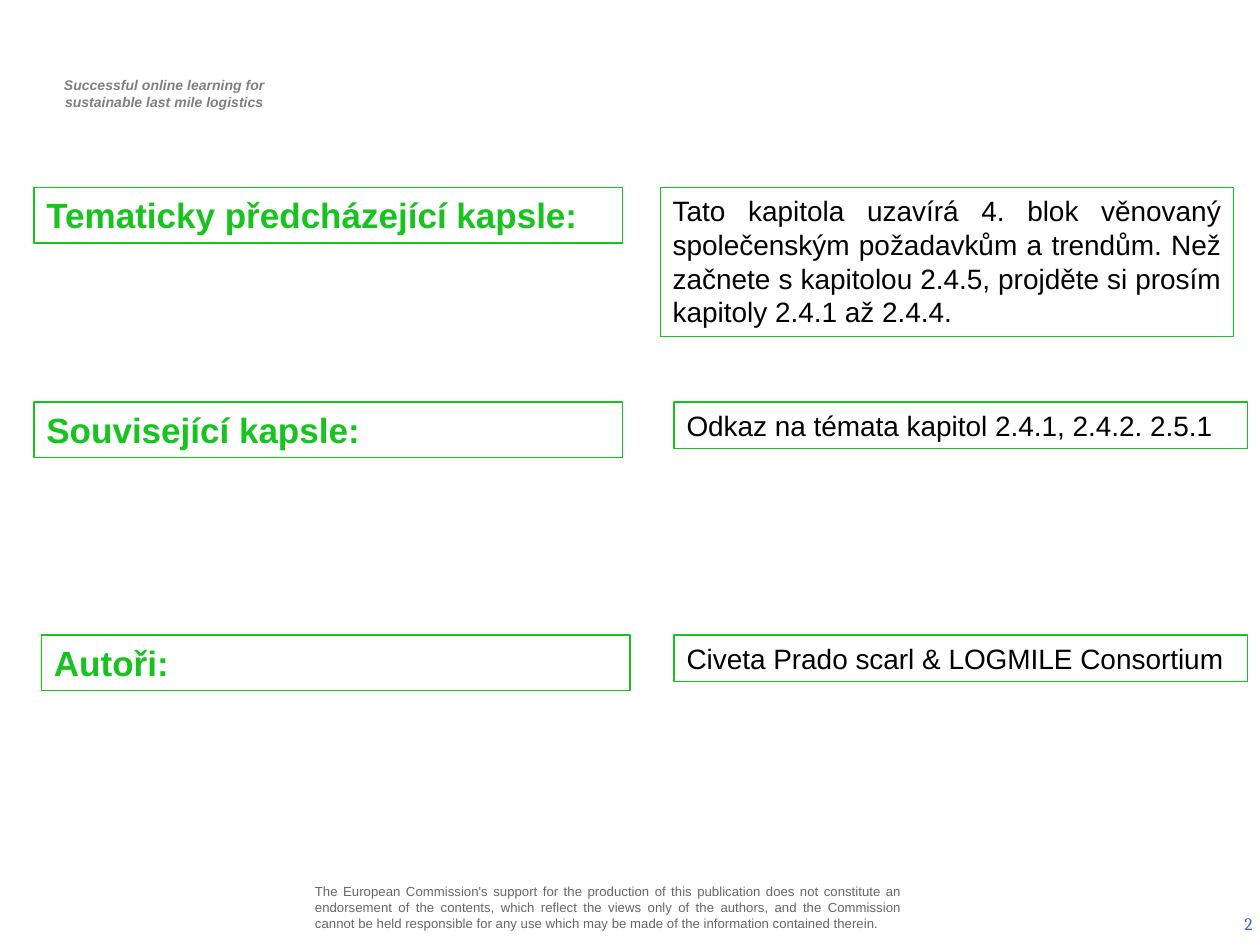
from pptx import Presentation
from pptx.dml.color import RGBColor
from pptx.enum.shapes import MSO_SHAPE as Shape
from pptx.enum.text import MSO_ANCHOR as Anchor, MSO_AUTO_SIZE as AutoSize, PP_ALIGN as Align
from pptx.util import Inches, Pt

GREEN, BLACK, WHITE = "18C320", "000000", "FFFFFF"
GRAY, DARK_GRAY, BLUE = "7F7F7F", "666666", "3366CC"


def color(value):
    return RGBColor.from_string(value)


class CapsuleSlide:
    font = "Arial"

    def __init__(self, prs):
        self.slide = prs.slides.add_slide(prs.slide_layouts[6])

    def set_text(self, sp, lines, size, ink, align=Align.LEFT, bold=False,
                 italic=False, font=None, anchor=Anchor.TOP, margins=(0.1, 0.05)):
        tf = sp.text_frame
        tf.word_wrap = True
        tf.vertical_anchor = anchor
        tf.margin_left = tf.margin_right = Inches(margins[0])
        tf.margin_top = tf.margin_bottom = Inches(margins[1])
        tf.text = "\n".join(lines)
        for p in tf.paragraphs:
            p.alignment = align
            p.font.name = font or self.font
            p.font.size = Pt(size)
            p.font.bold = bold
            p.font.italic = italic
            p.font.color.rgb = color(ink)

    def text(self, left, top, width, height, lines, size, ink, **style):
        sp = self.slide.shapes.add_textbox(
            Inches(left), Inches(top), Inches(width), Inches(height))
        self.set_text(sp, lines, size, ink, **style)

    def box(self, left, top, width, height, text, size, ink, **style):
        """Add a white text box with a thin green outline."""
        sp = self.slide.shapes.add_shape(
            Shape.RECTANGLE, Inches(left), Inches(top), Inches(width), Inches(height))
        sp.shadow.inherit = False
        sp.fill.solid()
        sp.fill.fore_color.rgb = color(WHITE)
        sp.line.color.rgb = color(GREEN)
        sp.line.width = Pt(0.75)
        self.set_text(sp, [text], size, ink, **style)
        sp.text_frame.auto_size = AutoSize.SHAPE_TO_FIT_TEXT

    def heading(self, left, top, text):
        self.box(left, top, 4.67, 0.44, text, 20, GREEN, bold=True)

    def answer(self, left, top, height, text, align=Align.LEFT):
        self.box(left, top, 4.55, height, text, 16, BLACK, align=align)


def main():
    prs = Presentation()
    prs.slide_width, prs.slide_height = Inches(10), Inches(7.5)
    s = CapsuleSlide(prs)

    s.text(0.29, 0.56, 2.03, 0.37,
           ["Successful online learning for", "sustainable last mile logistics"],
           8, GRAY, align=Align.CENTER, bold=True, italic=True)
    s.text(2.46, 6.95, 4.73, 0.5,
           ["The European Commission's support for the production of this publication "
            "does not constitute an endorsement of the contents, which reflect the views "
            "only of the authors, and the Commission cannot be held responsible for any "
            "use which may be made of the information contained therein."],
           7.5, DARK_GRAY, align=Align.JUSTIFY, anchor=Anchor.MIDDLE, margins=(0.04, 0.04))
    s.text(7.71, 7.13, 2.33, 0.4, ["2"], 10, BLUE,
           align=Align.RIGHT, font="Cambria", anchor=Anchor.MIDDLE)

    previous, related, authors = 1.49, 3.19, 5.04
    s.heading(0.27, previous, "Tematicky předcházející kapsle:")
    s.answer(5.24, previous, 1.18,
             "Tato kapitola uzavírá 4. blok věnovaný společenským požadavkům a trendům. "
             "Než začnete s kapitolou 2.4.5, projděte si prosím kapitoly 2.4.1 až 2.4.4.",
             align=Align.JUSTIFY)
    s.heading(0.27, related, "Související kapsle:")
    s.answer(5.35, related, 0.37, "Odkaz na témata kapitol 2.4.1, 2.4.2. 2.5.1")
    s.heading(0.33, authors, "Autoři:")
    s.answer(5.35, authors, 0.37, "Civeta Prado scarl & LOGMILE Consortium")

    prs.save("out.pptx")


if __name__ == "__main__":
    main()
